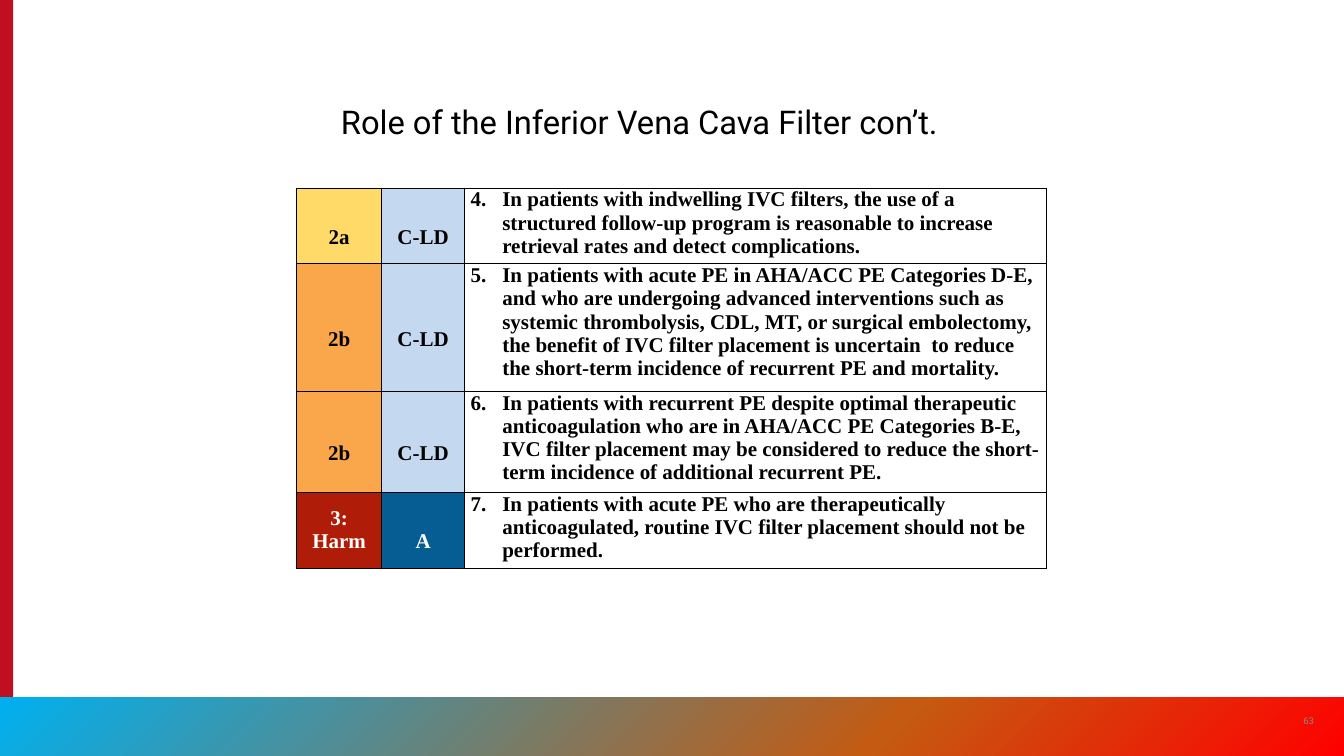
"""Build the slide on the role of the inferior vena cava filter."""
from copy import deepcopy
from dataclasses import dataclass

from lxml.etree import SubElement
from pptx import Presentation
from pptx.dml.color import RGBColor
from pptx.enum.shapes import MSO_SHAPE as Shape
from pptx.enum.text import MSO_ANCHOR as Anchor, PP_ALIGN as Align
from pptx.oxml.ns import qn
from pptx.util import Cm, Pt

TITLE = "Role of the Inferior Vena Cava Filter con’t."
PAGE_NUMBER = "63"
FIRST_NUMBER = 4
RECOMMENDATIONS = [
    ("2a", "C-LD", "In patients with indwelling IVC filters, the use of a structured follow-up "
     "program is reasonable to increase retrieval rates and detect complications."),
    ("2b", "C-LD", "In patients with acute PE in AHA/ACC PE Categories D-E, and who are undergoing "
     "advanced interventions such as systemic thrombolysis, CDL, MT, or surgical embolectomy, "
     "the benefit of IVC filter placement is uncertain  to reduce the short-term incidence of "
     "recurrent PE and mortality."),
    ("2b", "C-LD", "In patients with recurrent PE despite optimal therapeutic anticoagulation who "
     "are in AHA/ACC PE Categories B-E, IVC filter placement may be considered to reduce the "
     "short-term incidence of additional recurrent PE."),
    ("3: Harm", "A", "In patients with acute PE who are therapeutically anticoagulated, routine "
     "IVC filter placement should not be performed."),
]
COLUMN_WIDTHS = (2.57, 2.51, 17.6)
ROW_HEIGHTS = (2.26, 3.86, 3.05, 2.29)
SLIDE_WIDTH, SLIDE_HEIGHT = 40.64, 22.86
FOOTER_HEIGHT = 1.78
NUMBER_INDENT = 0.96


@dataclass(frozen=True)
class Theme:
    heading_font: str = "Roboto"
    table_font: str = "Times New Roman"
    title_size: int = 28
    table_size: int = 18
    page_size: int = 8
    black: str = "000000"
    white: str = "FFFFFF"
    gray: str = "8A8B8A"
    side_bar: str = "C10E21"
    footer: tuple = ((0, "00B0F0"), (0.66, "C55A11"), (1, "FF0000"))


THEME = Theme()
LABEL_STYLES = {
    "2a": ("FFDA68", THEME.black),
    "2b": ("FAA74B", THEME.black),
    "3: Harm": ("AF1C08", THEME.white),
    "C-LD": ("C4D9F0", THEME.black),
    "A": ("065D93", THEME.white),
}


def rgb(color):
    return RGBColor.from_string(color)


def set_font(paragraph, name, size, color, bold=False):
    font = paragraph.font
    font.name, font.size, font.bold = name, Pt(size), bold
    font.color.rgb = rgb(color)


def add_bar(slide, left, top, width, height):
    bar = slide.shapes.add_shape(Shape.RECTANGLE, Cm(left), Cm(top), Cm(width), Cm(height))
    bar.shadow.inherit = False
    bar.line.fill.background()
    return bar


def add_footer(slide):
    footer = add_bar(slide, 0, SLIDE_HEIGHT - FOOTER_HEIGHT, SLIDE_WIDTH, FOOTER_HEIGHT)
    footer.fill.gradient()
    footer.fill.gradient_angle = 315
    stop_list = footer._element.spPr.find(".//" + qn("a:gsLst"))
    stop_list.append(deepcopy(stop_list[0]))
    for stop, (position, color) in zip(footer.fill.gradient_stops, THEME.footer):
        stop.position = position
        stop.color.rgb = rgb(color)


def add_text(slide, text, left, top, width, height):
    box = slide.shapes.add_textbox(Cm(left), Cm(top), Cm(width), Cm(height))
    box.text_frame.word_wrap = True
    box.text_frame.text = text
    return box.text_frame


def add_borders(cell):
    properties = cell._tc.get_or_add_tcPr()
    for side in ("a:lnL", "a:lnR", "a:lnT", "a:lnB"):
        line = SubElement(properties, qn(side), w=str(Pt(1)))
        fill = SubElement(line, qn("a:solidFill"))
        SubElement(fill, qn("a:srgbClr"), val=THEME.black)


def fill_cell(cell, text):
    cell.margin_left = cell.margin_right = Cm(0.18)
    cell.margin_top = cell.margin_bottom = 0
    add_borders(cell)
    cell.text = text
    paragraph = cell.text_frame.paragraphs[0]
    paragraph.space_after = Pt(8)
    return paragraph


def fill_label(cell, text):
    background, color = LABEL_STYLES[text]
    paragraph = fill_cell(cell, text)
    paragraph.alignment = Align.CENTER
    paragraph.line_spacing = 1.0 if " " in text else 2.0
    set_font(paragraph, THEME.table_font, THEME.table_size, color, bold=True)
    cell.vertical_anchor = Anchor.MIDDLE
    cell.fill.solid()
    cell.fill.fore_color.rgb = rgb(background)


def fill_statement(cell, text, number):
    paragraph = fill_cell(cell, text)
    properties = paragraph._p.get_or_add_pPr()
    properties.set("marL", str(Cm(NUMBER_INDENT)))
    properties.set("indent", str(-Cm(NUMBER_INDENT)))
    SubElement(properties, qn("a:buFont"), typeface="+mj-lt")
    SubElement(properties, qn("a:buAutoNum"), type="arabicPeriod", startAt=str(number))
    set_font(paragraph, THEME.table_font, THEME.table_size, THEME.black, bold=True)
    cell.fill.background()


def add_recommendations(slide):
    table = slide.shapes.add_table(
        len(ROW_HEIGHTS), len(COLUMN_WIDTHS), Cm(8.97), Cm(5.69),
        Cm(sum(COLUMN_WIDTHS)), Cm(sum(ROW_HEIGHTS))).table
    table.first_row = table.horz_banding = False
    for column, width in zip(table.columns, COLUMN_WIDTHS):
        column.width = Cm(width)
    for index, (row, height) in enumerate(zip(table.rows, ROW_HEIGHTS)):
        row.height = Cm(height)
        *labels, statement = RECOMMENDATIONS[index]
        for cell, label in zip(row.cells, labels):
            fill_label(cell, label)
        fill_statement(table.cell(index, len(labels)), statement, FIRST_NUMBER + index)


def main():
    presentation = Presentation()
    presentation.slide_width, presentation.slide_height = Cm(SLIDE_WIDTH), Cm(SLIDE_HEIGHT)
    slide = presentation.slides.add_slide(presentation.slide_layouts[6])

    side_bar = add_bar(slide, 0, 0, 0.4, SLIDE_HEIGHT)
    side_bar.fill.solid()
    side_bar.fill.fore_color.rgb = rgb(THEME.side_bar)
    add_footer(slide)

    page = add_text(slide, PAGE_NUMBER, 38.96, 21.18, 1.22, 1.22)
    page.margin_left = page.margin_right = page.margin_top = page.margin_bottom = 0
    page.vertical_anchor = Anchor.MIDDLE
    page.paragraphs[0].alignment = Align.CENTER
    set_font(page.paragraphs[0], THEME.heading_font, THEME.page_size, THEME.gray)

    title = add_text(slide, TITLE, 10.06, 2.97, 20.5, 1.45)
    set_font(title.paragraphs[0], THEME.heading_font, THEME.title_size, THEME.black)

    add_recommendations(slide)
    presentation.save("out.pptx")


if __name__ == "__main__":
    main()
